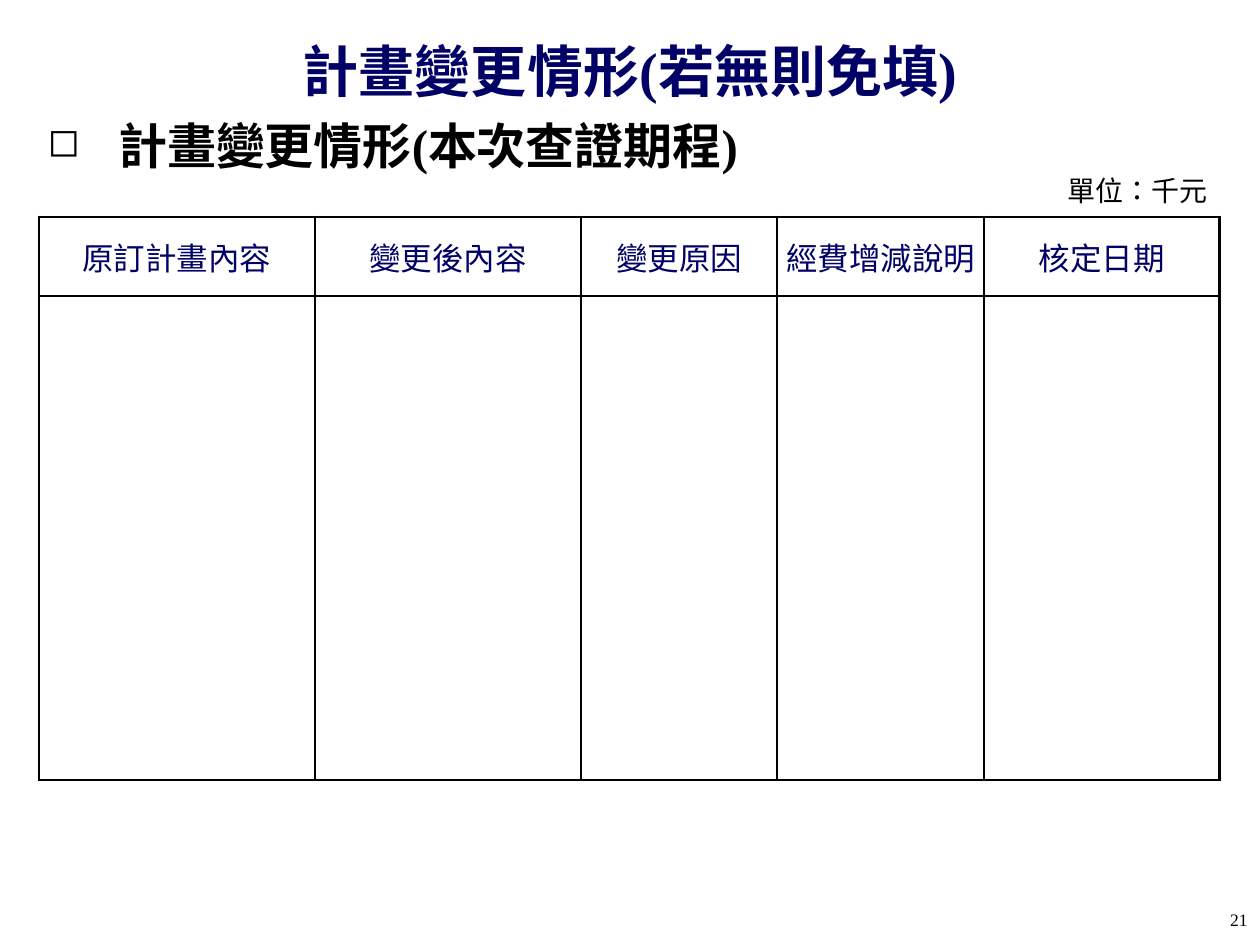
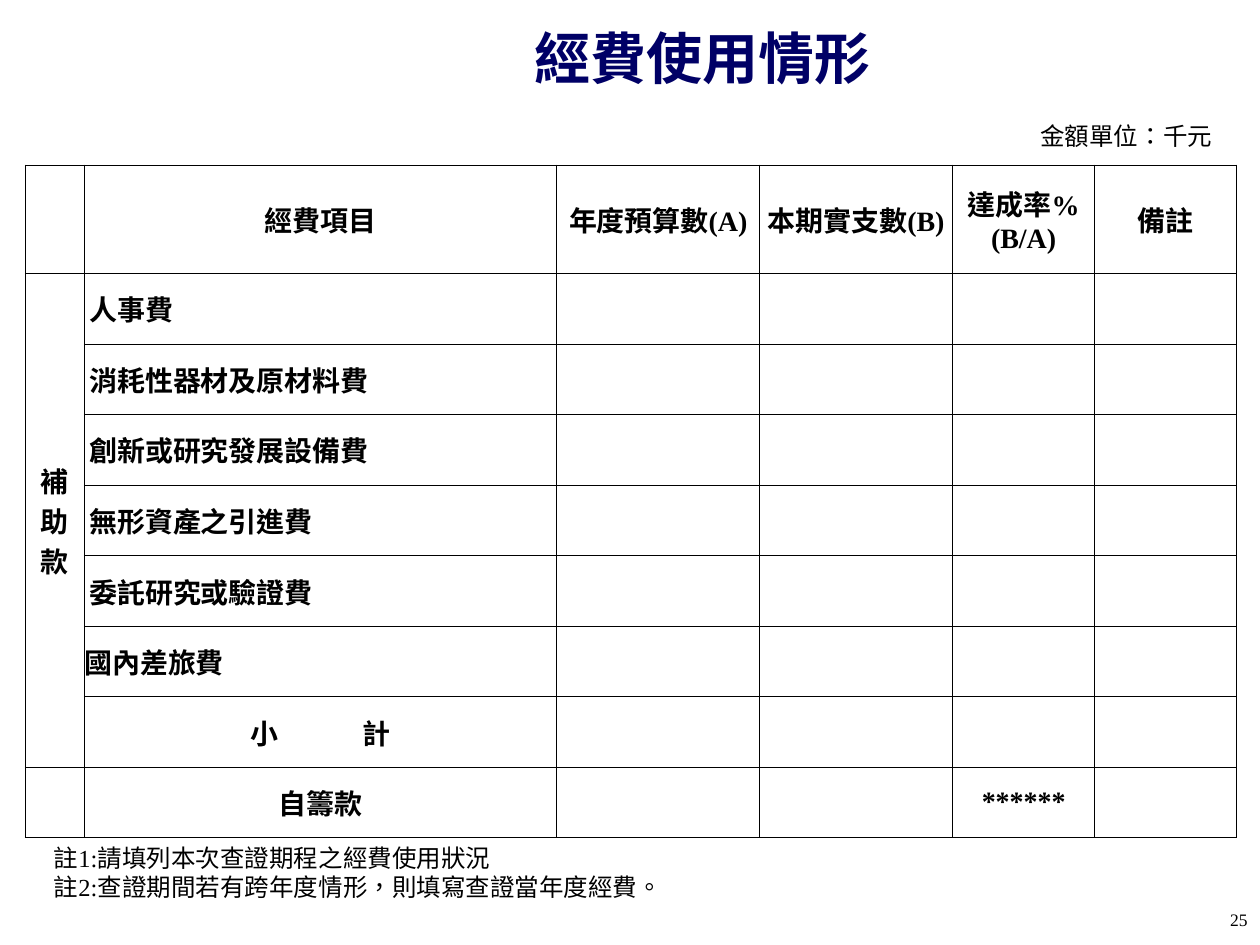
from lxml.etree import SubElement
from pptx import Presentation
from pptx.dml.color import RGBColor
from pptx.enum.text import MSO_ANCHOR, MSO_AUTO_SIZE, PP_ALIGN
from pptx.oxml.ns import qn
from pptx.util import Inches, Pt

COLORS = {"title": "000066", "text": "000000", "paper": "FFFFFF"}
FONT = "Times New Roman"
LANGUAGE = "zh-TW"
TITLE_ONLY = 5


def write(frame, text, size=16, color="text", bold=False, align=PP_ALIGN.LEFT,
          bullet=None, indent=0, tab=None):
    for index, line in enumerate(text.split("\n")):
        paragraph = frame.paragraphs[0] if index == 0 else frame.add_paragraph()
        paragraph.text = line
        paragraph.alignment = align
        properties = paragraph._p.get_or_add_pPr()
        if bullet:
            properties.set("marL", str(Inches(indent)))
            properties.set("indent", str(-Inches(indent)))
            SubElement(properties, qn("a:buSzPct"), val="80000")
            SubElement(properties, qn("a:buChar"), char=bullet)
        if tab:
            stops = SubElement(properties, qn("a:tabLst"))
            SubElement(stops, qn("a:tab"), pos=str(Inches(tab)), algn="l")
        for run in paragraph.runs:
            run.font.name = FONT
            run.font.size = Pt(size)
            run.font.bold = bold
            run.font.color.rgb = RGBColor.from_string(COLORS[color])
            run._r.get_or_add_rPr().set("lang", LANGUAGE)


class Deck:
    def __init__(self):
        self.presentation = Presentation()
        self.presentation.slide_width = Inches(10)
        self.presentation.slide_height = Inches(7.5)
        self.slide = None

    def start(self, title, left, top, width, number):
        layout = self.presentation.slide_layouts[TITLE_ONLY]
        self.slide = self.presentation.slides.add_slide(layout)
        shape = self.slide.shapes.title
        shape.left, shape.top = Inches(left), Inches(top)
        shape.width, shape.height = Inches(width), Inches(0.79)
        frame = shape.text_frame
        frame.auto_size = MSO_AUTO_SIZE.NONE
        frame.vertical_anchor = MSO_ANCHOR.MIDDLE
        write(frame, title, size=32, color="title", bold=True, align=PP_ALIGN.CENTER)
        self.text(str(number), 7.67, 7.1, 2.33, 0.4, anchor=MSO_ANCHOR.MIDDLE,
                  size=10, align=PP_ALIGN.RIGHT)

    def text(self, text, left, top, width, height, anchor=MSO_ANCHOR.TOP, wrap=True, **style):
        shape = self.slide.shapes.add_textbox(
            Inches(left), Inches(top), Inches(width), Inches(height))
        frame = shape.text_frame
        frame.word_wrap = wrap
        frame.vertical_anchor = anchor
        write(frame, text, **style)

    def table(self, left, top, widths, heights, border, fill=None):
        shape = self.slide.shapes.add_table(
            len(heights), len(widths), Inches(left), Inches(top),
            Inches(sum(widths)), Inches(sum(heights)))
        table = shape.table
        table.first_row = table.horz_banding = False
        for column, width in zip(table.columns, widths):
            column.width = Inches(width)
        for row, height in zip(table.rows, heights):
            row.height = Inches(height)
        for cell in table.iter_cells():
            self.border(cell, border)
            if fill:
                cell.fill.solid()
                cell.fill.fore_color.rgb = RGBColor.from_string(COLORS[fill])
            else:
                cell.fill.background()
        return table

    def border(self, cell, width):
        properties = cell._tc.get_or_add_tcPr()
        for side in ("lnL", "lnR", "lnT", "lnB"):
            line = SubElement(properties, qn(f"a:{side}"), w=str(Pt(width)))
            solid = SubElement(line, qn("a:solidFill"))
            SubElement(solid, qn("a:srgbClr"), val=COLORS["text"])

    def cell(self, cell, text, left=0, right=0, align=PP_ALIGN.CENTER, **style):
        cell.margin_left, cell.margin_right = Inches(left), Inches(right)
        cell.margin_top = cell.margin_bottom = 0
        cell.vertical_anchor = MSO_ANCHOR.MIDDLE
        write(cell.text_frame, text, align=align, **style)


def build_plan_changes(deck):
    deck.start("計畫變更情形(若無則免填)", 0.5, 0.16, 9, 21)
    deck.text("計畫變更情形(本次查證期程)", 0.28, 0.87, 9.21, 0.59,
              size=28, bold=True, bullet="◻", indent=0.56)
    table = deck.table(0.31, 1.72, [2.19, 2.11, 1.56, 1.64, 1.87], [0.63, 3.84],
                       border=1.5, fill="paper")
    headings = ["原訂計畫內容", "變更後內容", "變更原因", "經費增減說明", "核定日期"]
    for column, heading in enumerate(headings):
        deck.cell(table.cell(0, column), heading, left=0.01, right=0.01,
                  size=18, color="title")
    deck.text("單位：千元", 8.36, 1.33, 1.32, 0.37, wrap=False, align=PP_ALIGN.RIGHT)


def build_expenses(deck):
    deck.start("經費使用情形", 2.03, 0.06, 7.09, 25)
    table = deck.table(0.2, 1.31, [0.47, 3.75, 1.61, 1.53, 1.13, 1.12],
                       [0.86] + [0.56] * 8, border=0.5)
    headings = ["經費項目", "年度預算數(A)", "本期實支數(B)", "達成率%\v(B/A)", "備註"]
    for column, heading in enumerate(headings, start=1):
        deck.cell(table.cell(0, column), heading, bold=True)

    grant = table.cell(1, 0)
    grant.merge(table.cell(7, 0))
    deck.cell(grant, "補助款", left=0.04, right=0.04, bold=True)
    grant._tc.get_or_add_tcPr().set("vert", "eaVert")

    items = ["人事費", "消耗性器材及原材料費", "創新或研究發展設備費",
             "無形資產之引進費", "委託研究或驗證費", "國內差旅費"]
    for row, item in enumerate(items, start=1):
        left = 0 if item == items[-1] else 0.04
        deck.cell(table.cell(row, 1), item, left=left, align=PP_ALIGN.LEFT, bold=True)
    deck.cell(table.cell(7, 1), "小\t計", left=1.32, align=PP_ALIGN.LEFT, bold=True, tab=0.89)
    deck.cell(table.cell(8, 1), "自籌款", bold=True)
    deck.cell(table.cell(8, 4), "******", bold=True)

    deck.text("金額單位：千元", 7.99, 0.91, 1.73, 0.34, size=14, align=PP_ALIGN.RIGHT)
    deck.text("註1:請填列本次查證期程之經費使用狀況\n"
              "註2:查證期間若有跨年度情形，則填寫查證當年度經費。",
              0.33, 6.64, 8.83, 0.81, size=14)


def main():
    deck = Deck()
    build_plan_changes(deck)
    build_expenses(deck)
    deck.presentation.save("out.pptx")


if __name__ == "__main__":
    main()
